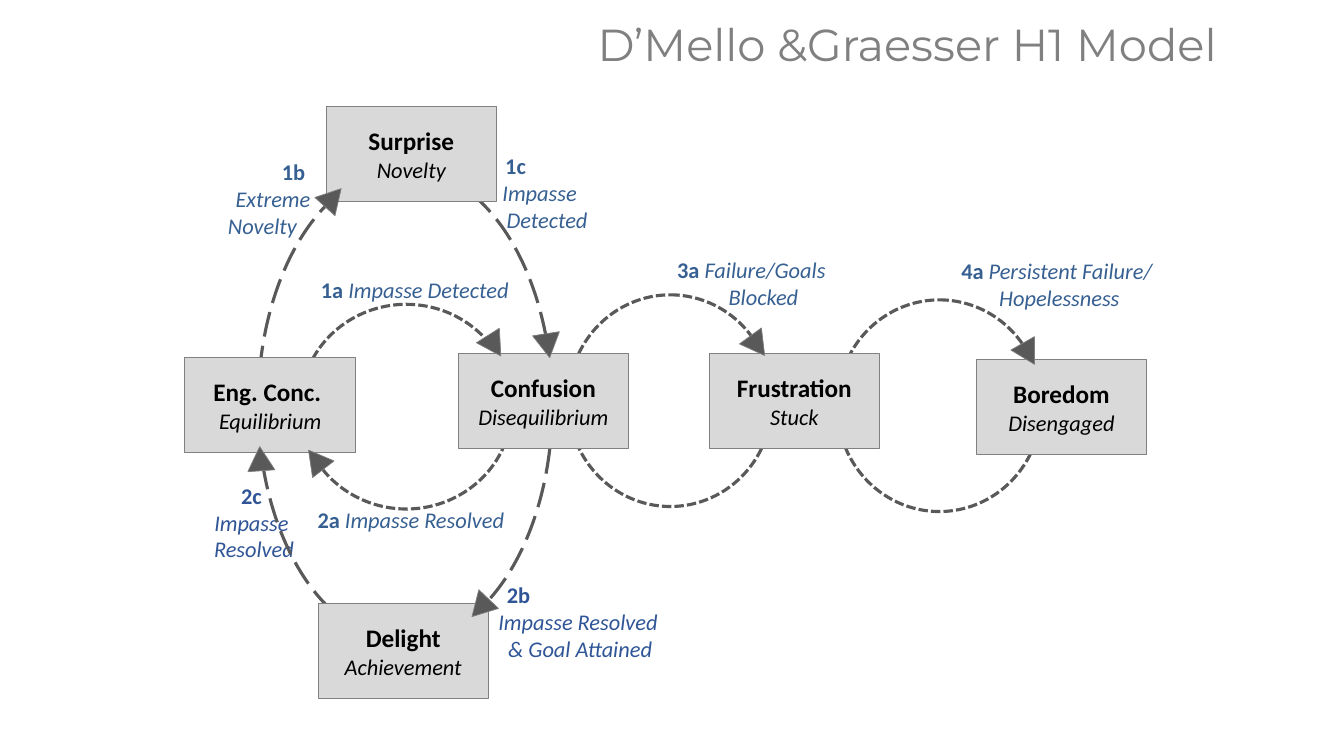
"""Build the affect transition model slide with its states, cycles and labels."""
import pptx
import pptx.dml.color
import pptx.enum.dml
import pptx.enum.shapes
import pptx.enum.text
import pptx.util

Pt = pptx.util.Pt
RGBColor = pptx.dml.color.RGBColor
Align = pptx.enum.text.PP_ALIGN
Dash = pptx.enum.dml.MSO_LINE
Preset = pptx.enum.shapes.MSO_SHAPE

BLACK = RGBColor(0x00, 0x00, 0x00)
DARK_GRAY = RGBColor(0x59, 0x59, 0x59)
GRAY = RGBColor(0x80, 0x80, 0x80)
LIGHT_GRAY = RGBColor(0xD9, 0xD9, 0xD9)
BLUE = RGBColor(0x37, 0x60, 0x92)
DEEP_BLUE = RGBColor(0x2F, 0x55, 0x97)

CYCLES = [
    (403.2, 213.1, 151.2, 146.2, 90, Dash.SQUARE_DOT),
    (214.6, 217.4, 151.2, 146.2, 0, Dash.SQUARE_DOT),
    (184.3, 120.2, 210.2, 338.4, 0, Dash.LONG_DASH),
    (595.4, 216.7, 151.2, 146.2, 90, Dash.SQUARE_DOT),
]
STATES = [
    ("Surprise", "Novelty", 233.3, 76.3, 121),
    ("Eng. Conc. ", "Equilibrium", 131.8, 255.6, 122.4),
    ("Delight", "Achievement", 227.5, 431.3, 121),
    ("Confusion", "Disequilibrium", 327.6, 252.7, 121),
    ("Frustration", "Stuck", 506.9, 252.7, 121),
    ("Boredom", "Disengaged", 697.7, 257, 121),
]
ARROWHEADS = [
    (216, 319.7, 322.3),
    (343.4, 238.3, 147.7),
    (381.6, 238.3, 171.2),
    (531.4, 238.3, 143.9),
    (228.2, 132.5, 42.1),
    (725, 244.1, 150.5),
    (333.4, 425.5, 223.6),
    (176.4, 319, 356),
]
LABELS = [
    (115.2, 109.4, 145.4, BLUE, Align.LEFT,
     [("1b", "", 79), ("", "Extreme", 46), ("", "Novelty", 40.5)]),
    (195.1, 193.7, 202.3, BLUE, Align.CENTER, [("1a ", "Impasse Detected", 0)]),
    (303.8, 105.1, 145.4, BLUE, Align.LEFT,
     [("1c", "", 50), ("", "Impasse", 48), ("", "Detected", 51)]),
    (331.9, 411.8, 164.2, DEEP_BLUE, Align.LEFT,
     [("2b", "", 23), ("", "Impasse Resolved", 17), ("", "& Goal Attained", 24)]),
    (108.7, 340.6, 145.4, DEEP_BLUE, Align.CENTER,
     [("2c ", "", 0), ("", "Impasse ", 0), ("", "Resolved", 0)]),
    (465.8, 179.3, 145.4, BLUE, Align.CENTER,
     [("3a ", "Failure/Goals ", 0), ("", "Blocked", 13.6)]),
    (652.3, 180, 208.8, BLUE, Align.CENTER,
     [("4a ", "Persistent Failure/ ", 0), ("", "Hopelessness", 0)]),
    (196.6, 357.8, 193.7, BLUE, Align.CENTER, [("2a ", "Impasse Resolved", 0)]),
]


def add_text(paragraph, text, *, size=16, color=BLACK, font="Calibri", bold=False, italic=False):
    """Append a formatted run to a paragraph."""
    run = paragraph.add_run()
    run.text = text
    run.font.name = font
    run.font.size = Pt(size)
    run.font.color.rgb = color
    run.font.bold = bold
    run.font.italic = italic


class ModelSlide:
    """Hold the slide and the style of its elements."""

    label_line = 19.4
    label_margin = 7.2
    state_height = 67.7
    arrowhead_size = (19.4, 17.3)

    def __init__(self, slide):
        """Keep the slide to draw on."""
        self.slide = slide

    def shape(self, preset, left, top, width, height, *, fill=None, line=GRAY, weight=0.5, rotation=0):
        """Add a preset shape without a shadow."""
        shape = self.slide.shapes.add_shape(preset, Pt(left), Pt(top), Pt(width), Pt(height))
        shape.shadow.inherit = False
        shape.rotation = rotation
        if fill is None:
            shape.fill.background()
        else:
            shape.fill.solid()
            shape.fill.fore_color.rgb = fill
        shape.line.color.rgb = line
        shape.line.width = Pt(weight)
        return shape

    def text_frame(self, left, top, width, height):
        """Add a wrapping text box and return its frame."""
        box = self.slide.shapes.add_textbox(Pt(left), Pt(top), Pt(width), Pt(height))
        box.text_frame.word_wrap = True
        return box.text_frame

    def title(self, text):
        """Add the slide heading."""
        frame = self.text_frame(419.8, 8.6, 517.7, 46.1)
        add_text(frame.paragraphs[0], text, size=32, color=GRAY, font="Montserrat")

    def label(self, left, top, width, color, alignment, lines):
        """Add a transition label with a bold code and italic wording."""
        height = self.label_margin + self.label_line * len(lines)
        frame = self.text_frame(left, top, width, height)
        for index, (code, wording, indent) in enumerate(lines):
            paragraph = frame.add_paragraph() if index else frame.paragraphs[0]
            paragraph.alignment = alignment
            if indent:
                paragraph._p.get_or_add_pPr().set("marL", str(Pt(indent)))
            if code:
                add_text(paragraph, code, color=color, bold=True)
            if wording:
                add_text(paragraph, wording, color=color, italic=True)

    def cycle(self, left, top, width, height, rotation, dash):
        """Add a dashed ellipse that links states."""
        ellipse = self.shape(Preset.OVAL, left, top, width, height,
                             line=DARK_GRAY, weight=2.25, rotation=rotation)
        ellipse.line.dash_style = dash

    def state(self, name, meaning, left, top, width):
        """Add a state box with its name and meaning."""
        box = self.shape(Preset.RECTANGLE, left, top, width, self.state_height, fill=LIGHT_GRAY)
        frame = box.text_frame
        frame.word_wrap = True
        frame.vertical_anchor = pptx.enum.text.MSO_ANCHOR.MIDDLE
        heading, detail = frame.paragraphs[0], frame.add_paragraph()
        heading.alignment = detail.alignment = Align.CENTER
        add_text(heading, name, size=18, bold=True)
        add_text(detail, meaning, italic=True)

    def arrowhead(self, left, top, rotation):
        """Add a triangle that marks the direction of a cycle."""
        self.shape(Preset.ISOSCELES_TRIANGLE, left, top, *self.arrowhead_size,
                   fill=DARK_GRAY, rotation=rotation)


def main():
    """Draw the model and save the presentation."""
    presentation = pptx.Presentation()
    presentation.slide_width = Pt(960)
    presentation.slide_height = Pt(540)
    model = ModelSlide(presentation.slides.add_slide(presentation.slide_layouts[6]))
    for draw, rows in (
        (model.label, LABELS),
        (model.cycle, CYCLES),
        (model.state, STATES),
        (model.arrowhead, ARROWHEADS),
    ):
        for row in rows:
            draw(*row)
    model.title("D’Mello &Graesser H1 Model")
    presentation.save("out.pptx")


if __name__ == "__main__":
    main()
